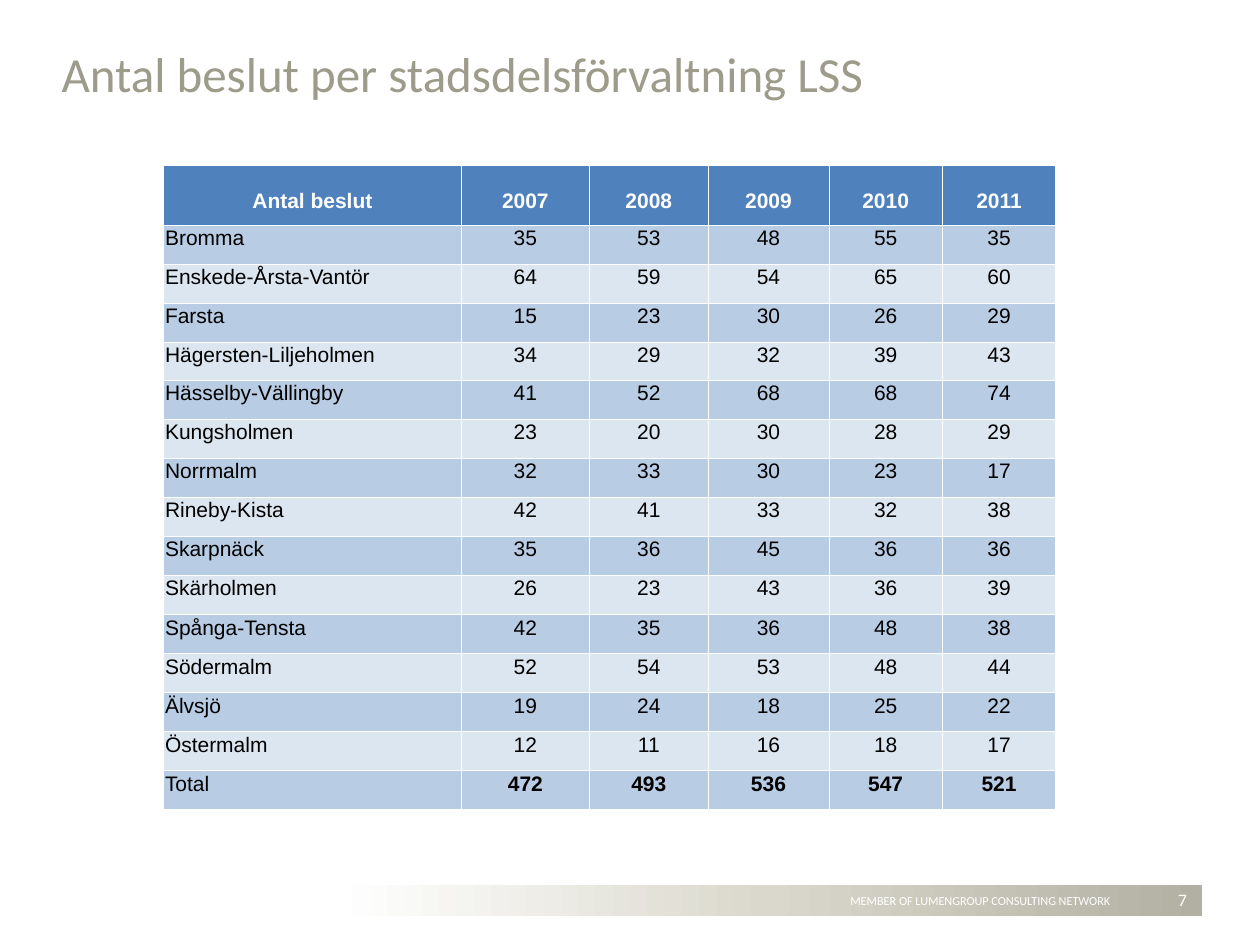
from copy import deepcopy

from pptx import Presentation
from pptx.dml.color import RGBColor
from pptx.enum.shapes import MSO_SHAPE
from pptx.enum.text import MSO_ANCHOR, PP_ALIGN
from pptx.oxml import parse_xml
from pptx.oxml.ns import nsdecls, qn
from pptx.util import Inches, Pt

LEFT, CENTER, RIGHT = PP_ALIGN.LEFT, PP_ALIGN.CENTER, PP_ALIGN.RIGHT
TOP, MIDDLE, BOTTOM = MSO_ANCHOR.TOP, MSO_ANCHOR.MIDDLE, MSO_ANCHOR.BOTTOM
RECTANGLE = MSO_SHAPE.RECTANGLE

SLIDE_WIDTH, SLIDE_HEIGHT = Inches(10), Inches(7.5)
GRID_COLUMNS, GRID_ROWS = 1000, 750

WHITE, BLACK, TITLE_COLOR = "FFFFFF", "000000", "9D9B8A"
HEADER_FILL, BAND_FILLS = "4F81BD", ("B8CCE4", "DCE6F1")
BAR_STOPS = ((0, "B2B0A2"), (0.5, "DAD8CC"), (1, WHITE))

COLUMN_WIDTHS = (236, 102, 94, 96, 90, 90)
HEADER_HEIGHT, ROW_HEIGHT, SHORT_ROW_HEIGHT = 48, 31, 30
SHORT_DISTRICT = "Hägersten-Liljeholmen"
HEADINGS = ("Antal beslut", 2007, 2008, 2009, 2010, 2011)
DECISIONS = (
    ("Bromma", 35, 53, 48, 55, 35),
    ("Enskede-Årsta-Vantör", 64, 59, 54, 65, 60),
    ("Farsta", 15, 23, 30, 26, 29),
    ("Hägersten-Liljeholmen", 34, 29, 32, 39, 43),
    ("Hässelby-Vällingby", 41, 52, 68, 68, 74),
    ("Kungsholmen", 23, 20, 30, 28, 29),
    ("Norrmalm", 32, 33, 30, 23, 17),
    ("Rineby-Kista", 42, 41, 33, 32, 38),
    ("Skarpnäck", 35, 36, 45, 36, 36),
    ("Skärholmen", 26, 23, 43, 36, 39),
    ("Spånga-Tensta", 42, 35, 36, 48, 38),
    ("Södermalm", 52, 54, 53, 48, 44),
    ("Älvsjö", 19, 24, 18, 25, 22),
    ("Östermalm", 12, 11, 16, 18, 17),
    ("Total", 472, 493, 536, 547, 521),
)


def rgb(value):
    return RGBColor.from_string(value)


def across(columns):
    return round(SLIDE_WIDTH * columns / GRID_COLUMNS)


def down(rows):
    return round(SLIDE_HEIGHT * rows / GRID_ROWS)


def place(left, top, width, height):
    return across(left), down(top), across(width), down(height)


def style(paragraph, font_name, size, color, align, bold=False):
    paragraph.alignment = align
    font = paragraph.font
    font.name, font.size, font.bold = font_name, Pt(size), bold
    font.color.rgb = rgb(color)


def add_text(slide, area, text, size, color=WHITE, align=LEFT, anchor=TOP):
    frame = slide.shapes.add_textbox(*place(*area)).text_frame
    frame.word_wrap = True
    frame.vertical_anchor = anchor
    frame.text = text
    style(frame.paragraphs[0], "Calibri", size, color, align)


def add_footer_bar(slide, area):
    bar = slide.shapes.add_shape(RECTANGLE, *place(*area))
    bar.shadow.inherit = False
    bar.line.fill.background()
    bar.fill.gradient()
    bar.fill.gradient_angle = 180
    stops = bar._element.spPr.find(".//" + qn("a:gsLst"))
    stops.append(deepcopy(stops[0]))
    for stop, (position, color) in zip(bar.fill.gradient_stops, BAR_STOPS):
        stop.position = position
        stop.color.rgb = rgb(color)


def outline_cell(cell):
    """Draw thin white borders; they must come before the fill in the XML."""
    properties = cell._tc.get_or_add_tcPr()
    for index, side in enumerate(("lnL", "lnR", "lnT", "lnB")):
        properties.insert(index, parse_xml(
            f'<a:{side} {nsdecls("a")} w="{Pt(0.5)}"><a:solidFill>'
            f'<a:srgbClr val="{WHITE}"/></a:solidFill></a:{side}>'))


def fill_cell(cell, value, fill, color, align, bold):
    cell.margin_left = cell.margin_right = cell.margin_top = Inches(0.01)
    cell.margin_bottom = 0
    cell.fill.solid()
    cell.fill.fore_color.rgb = rgb(fill)
    outline_cell(cell)
    cell.text = str(value)
    style(cell.text_frame.paragraphs[0], "Arial", 12, color, align, bold)


def add_decision_table(slide, left, top):
    heights = [HEADER_HEIGHT] + [
        SHORT_ROW_HEIGHT if row[0] == SHORT_DISTRICT else ROW_HEIGHT
        for row in DECISIONS]
    area = place(left, top, sum(COLUMN_WIDTHS), sum(heights))
    table = slide.shapes.add_table(
        len(heights), len(COLUMN_WIDTHS), *area).table
    table.horz_banding = False
    for column, width in zip(table.columns, COLUMN_WIDTHS):
        column.width = across(width)
    for row, height in zip(table.rows, heights):
        row.height = down(height)

    for column, heading in enumerate(HEADINGS):
        cell = table.cell(0, column)
        fill_cell(cell, heading, HEADER_FILL, WHITE, CENTER, True)
        cell.vertical_anchor = BOTTOM
        cell.margin_bottom = Inches(0.1)
    for index, values in enumerate(DECISIONS):
        is_total = values[0] == "Total"
        for column, value in enumerate(values):
            fill_cell(table.cell(index + 1, column), value,
                      BAND_FILLS[index % 2], BLACK,
                      CENTER if column else LEFT, is_total and column > 0)


def main():
    presentation = Presentation()
    presentation.slide_width = SLIDE_WIDTH
    presentation.slide_height = SLIDE_HEIGHT
    slide = presentation.slides.add_slide(presentation.slide_layouts[6])

    add_footer_bar(slide, (266, 702, 688, 25))
    add_text(slide, (665, 704, 261, 22),
             "MEMBER OF LUMENGROUP CONSULTING NETWORK", 7)
    add_text(slide, (39, 7, 829, 79),
             "Antal beslut per stadsdelsförvaltning LSS", 28,
             TITLE_COLOR, anchor=BOTTOM)
    add_text(slide, (906, 701, 46, 25), "7", 10, align=RIGHT, anchor=MIDDLE)
    add_decision_table(slide, 130, 131)

    presentation.save("out.pptx")


if __name__ == "__main__":
    main()
